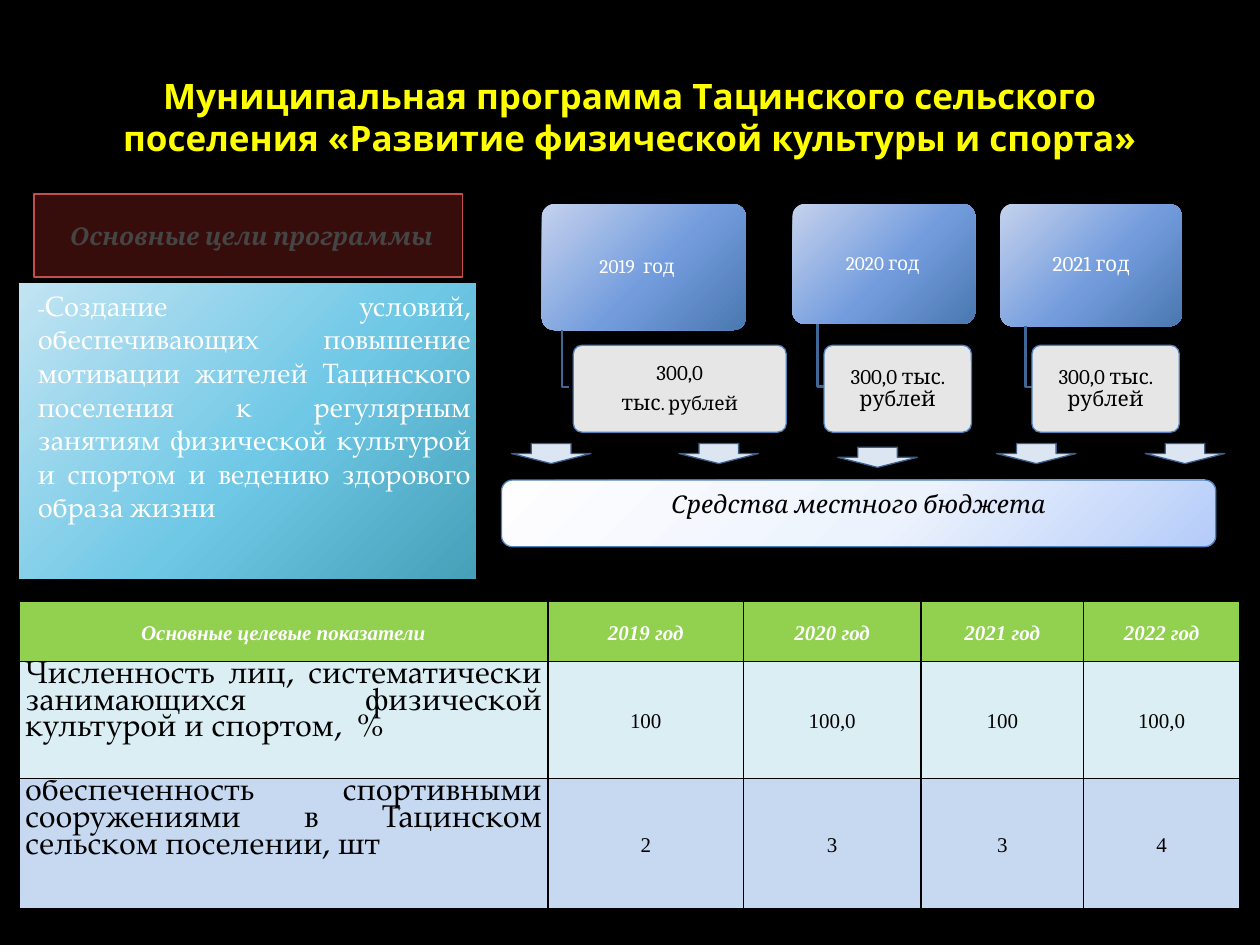
from lxml import etree
from pptx import Presentation
from pptx.dml.color import RGBColor
from pptx.enum.shapes import MSO_SHAPE as Shape
from pptx.enum.text import MSO_ANCHOR as Anchor, PP_ALIGN as Align
from pptx.oxml import parse_xml
from pptx.oxml.ns import nsdecls, qn
from pptx.util import Inches, Pt

TITLE = "Муниципальная программа Тацинского сельского поселения «Развитие физической культуры и спорта»"
GOALS_HEADING = "Основные цели программы"
GOAL = ("Создание условий, обеспечивающих повышение мотивации жителей Тацинского поселения "
        "к регулярным занятиям физической культурой и спортом и ведению здорового образа жизни")
# year, text size, right inset, left, width, height, amount lines, amount width
YEARS = [
    ("2019  год", 11, 0.16, 4.3, 1.62, 1.0, [[("300,0", 12)], [("тыс", 12), (". рублей", 11)]], 1.69),
    ("2020 год", 11, 0.07, 6.29, 1.45, 0.95, [[("300,0 тыс. рублей", 12)]], 1.17),
    ("2021 год", 12, 0.05, 7.94, 1.44, 0.97, [[("300,0 тыс. рублей", 12)]], 1.17),
]
FUNDING = "Средства местного бюджета"
ARROWS = [(4.06, 3.52), (5.39, 3.52), (6.65, 3.55), (7.91, 3.52), (9.09, 3.52)]
INDICATORS = [
    ("Основные целевые показатели", "2019 год", "2020 год", "2021 год", "2022 год"),
    ("Численность лиц, систематически занимающихся физической культурой и спортом,  %",
     "100", "100,0", "100", "100,0"),
    ("обеспеченность спортивными сооружениями в Тацинском сельском поселении, шт", "2", "3", "3", "4"),
]
COLUMN_WIDTHS = [4.2, 1.55, 1.41, 1.29, 1.24]
ROW_HEIGHTS = [0.48, 0.93, 1.03]
ROW_FILLS = ["92D050", "DBEEF4", "C6D9F1"]
BLUE_GRADIENT = ["C4D2EE", "739CDD", "4A78B0"]
AQUA_GRADIENT = ["C2E4F2", "6FC8E6", "46A0B8"]
PALE_GRADIENT = ["FEFEFF", "EDF3FD", "B5CCF9"]


def rgb(value):
    return RGBColor.from_string(value)


def place(item, left, top, width, height):
    item.left, item.top = Inches(left), Inches(top)
    item.width, item.height = Inches(width), Inches(height)


def style(font, size, name, color, bold=False, italic=False):
    font.size, font.name, font.bold, font.italic = Pt(size), name, bold, italic
    font.color.rgb = rgb(color)


def set_insets(holder, left, top, right, bottom):
    holder.margin_left, holder.margin_top = Inches(left), Inches(top)
    holder.margin_right, holder.margin_bottom = Inches(right), Inches(bottom)


def set_indent(paragraph, left):
    properties = paragraph._p.get_or_add_pPr()
    properties.set("marL", str(Inches(left)))
    properties.set("indent", "0")


def fill_solid(item, color, opacity=100):
    item.fill.solid()
    item.fill.fore_color.rgb = rgb(color)
    if opacity < 100:
        color_node = item.fill._xPr.find(qn("a:solidFill"))[0]
        etree.SubElement(color_node, qn("a:alpha")).set("val", str(opacity * 1000))


def fill_gradient(item, colors):
    """Three stops running from the top left to the bottom right."""
    item.fill.gradient()
    stops = item.fill._xPr.find(qn("a:gradFill")).find(qn("a:gsLst"))
    for stop in list(stops):
        stops.remove(stop)
    for position, color in zip((0, 55, 100), colors):
        stops.append(parse_xml(f'<a:gs {nsdecls("a")} pos="{position * 1000}">'
                               f'<a:srgbClr val="{color}"/></a:gs>'))
    item.fill.gradient_angle = 315


def outline(item, color, width=0.75):
    item.line.color.rgb = rgb(color)
    item.line.width = Pt(width)


def add_box(slide, preset, left, top, width, height, line=None, corner=None):
    box = slide.shapes.add_shape(preset, Inches(left), Inches(top), Inches(width), Inches(height))
    box.shadow.inherit = False
    if line:
        outline(box, line)
    else:
        box.line.fill.background()
    if corner:
        box.adjustments[0] = corner
    box.text_frame.word_wrap = True
    return box


def write_lines(box, lines, color, right_inset=0.05):
    """Centre lines of (text, size) runs inside a box of the diagram."""
    frame = box.text_frame
    frame.vertical_anchor = Anchor.MIDDLE
    set_insets(frame, 0.05, 0.04, right_inset, 0.04)
    for index, runs in enumerate(lines):
        paragraph = frame.add_paragraph() if index else frame.paragraphs[0]
        paragraph.alignment = Align.CENTER
        paragraph.line_spacing, paragraph.space_after = 0.9, Pt(4)
        for text, size in runs:
            run = paragraph.add_run()
            run.text = text
            style(run.font, size, "Cambria", color)


def add_headings(slide):
    title = slide.shapes.title
    place(title, 0.5, 0.3, 9, 1.25)
    title.text_frame.text = TITLE
    title.text_frame.vertical_anchor = Anchor.MIDDLE
    paragraph = title.text_frame.paragraphs[0]
    paragraph.alignment = Align.CENTER
    style(paragraph.font, 20, "Open Sans", "FFFF00", bold=True)

    heading = slide.placeholders[1]
    place(heading, 0.27, 1.54, 3.4, 0.66)
    fill_solid(heading, "DD3530", 25)
    outline(heading, "C0504D", 1)
    heading.text_frame.text = GOALS_HEADING
    heading.text_frame.vertical_anchor = Anchor.MIDDLE
    paragraph = heading.text_frame.paragraphs[0]
    paragraph.alignment, paragraph.space_before = Align.CENTER, Pt(3)
    set_indent(paragraph, 0.05)
    etree.SubElement(paragraph._p.get_or_add_pPr(), qn("a:buNone"))
    style(paragraph.font, 14, "Cambria", "454545", bold=True, italic=True)


def add_goal(slide):
    goal = add_box(slide, Shape.RECTANGLE, 0.15, 2.24, 3.63, 2.36, "000000")
    fill_gradient(goal, AQUA_GRADIENT)
    goal.text_frame.vertical_anchor = Anchor.TOP
    set_insets(goal.text_frame, 0, 0.05, 0.04, 0.05)
    paragraph = goal.text_frame.paragraphs[0]
    paragraph.alignment = Align.JUSTIFY
    paragraph.space_before = paragraph.space_after = Pt(3)
    set_indent(paragraph, 0.15)
    for text, size in (("-", 12), (GOAL, 16)):
        run = paragraph.add_run()
        run.text = text
        style(run.font, size, "TeX Gyre Pagella", "FFFFFF")


def add_year(slide, year, size, right_inset, left, width, height, amount, amount_width):
    top, amount_top = 1.62, 2.74
    year_box = add_box(slide, Shape.ROUNDED_RECTANGLE, left, top, width, height, corner=0.1)
    fill_gradient(year_box, BLUE_GRADIENT)
    write_lines(year_box, [[(year, size)]], "FFFFFF", right_inset)

    stem = left + (0.16 if width > 1.5 else 0.2)
    builder = slide.shapes.build_freeform(Inches(stem), Inches(top + height))
    builder.add_line_segments([(Inches(stem), Inches(3.07)),
                               (Inches(stem + 0.06), Inches(3.07))], close=False)
    branch = builder.convert_to_shape()
    branch.shadow.inherit = False
    branch.fill.background()
    outline(branch, "3F6797", 1.5)

    amount_box = add_box(slide, Shape.ROUNDED_RECTANGLE, left + 0.25, amount_top,
                         amount_width, 0.69, "4F81BD", 0.1)
    fill_solid(amount_box, "FFFFFF", 90)
    write_lines(amount_box, amount, "000000")


def add_funding(slide):
    funding = add_box(slide, Shape.ROUNDED_RECTANGLE, 3.98, 3.81, 5.67, 0.53, "4F81BD")
    fill_gradient(funding, PALE_GRADIENT)
    funding.text_frame.text = FUNDING
    funding.text_frame.vertical_anchor = Anchor.TOP
    paragraph = funding.text_frame.paragraphs[0]
    paragraph.alignment = Align.CENTER
    style(paragraph.font, 14, "Cambria", "000000", italic=True)
    for left, top in ARROWS:
        arrow = add_box(slide, Shape.DOWN_ARROW, left, top, 0.63, 0.16, "3A5F8C")
        fill_solid(arrow, "DCE6F2")


def add_borders(cell):
    properties = cell._tc.get_or_add_tcPr()
    for index, side in enumerate(("lnL", "lnR", "lnT", "lnB")):
        properties.insert(index, parse_xml(
            f'<a:{side} {nsdecls("a")} w="{Pt(1)}"><a:solidFill>'
            f'<a:srgbClr val="000000"/></a:solidFill></a:{side}>'))


def add_indicators(slide):
    table = slide.shapes.add_table(
        len(INDICATORS), len(COLUMN_WIDTHS), Inches(0.15), Inches(4.77),
        Inches(sum(COLUMN_WIDTHS)), Inches(sum(ROW_HEIGHTS))).table
    for column, width in zip(table.columns, COLUMN_WIDTHS):
        column.width = Inches(width)
    for r, texts in enumerate(INDICATORS):
        table.rows[r].height = Inches(ROW_HEIGHTS[r])
        for c, text in enumerate(texts):
            cell = table.cell(r, c)
            cell.text = text
            fill_solid(cell, ROW_FILLS[r])
            add_borders(cell)
            paragraph = cell.text_frame.paragraphs[0]
            if r and c == 0:
                set_insets(cell, 0.05, 0, 0.05, 0)
                paragraph.alignment, paragraph.line_spacing = Align.JUSTIFY, 0.85
                style(paragraph.font, 18, "TeX Gyre Pagella", "000000")
            else:
                set_insets(cell, 0.04, 0.06, 0.04, 0.06)
                cell.vertical_anchor = Anchor.MIDDLE
                paragraph.alignment, paragraph.line_spacing = Align.CENTER, 1.15
                style(paragraph.font, 12, "Times New Roman", "000000" if r else "FFFFFF", r == 0, r == 0)


def main():
    deck = Presentation()
    deck.slide_width, deck.slide_height = Inches(10), Inches(7.5)
    slide = deck.slides.add_slide(deck.slide_layouts[1])
    fill_solid(slide.background, "000000")
    add_headings(slide)
    add_goal(slide)
    add_indicators(slide)
    for year in YEARS:
        add_year(slide, *year)
    add_funding(slide)
    deck.save("out.pptx")


if __name__ == "__main__":
    main()
